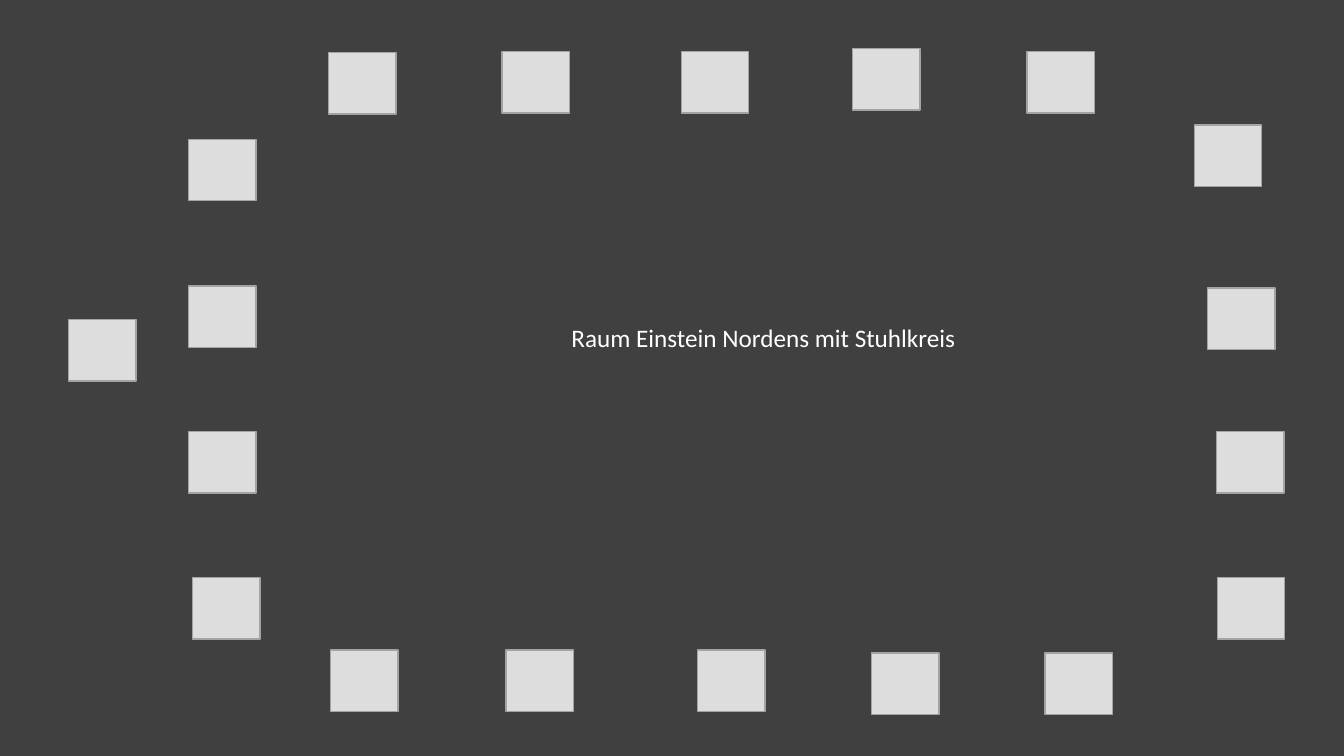
from pptx import Presentation
from pptx.dml.color import RGBColor
from pptx.enum.shapes import MSO_SHAPE
from pptx.enum.text import MSO_AUTO_SIZE
from pptx.util import Cm, Pt

RECTANGLE = MSO_SHAPE.RECTANGLE
FIT_SHAPE = MSO_AUTO_SIZE.SHAPE_TO_FIT_TEXT

COLORS = {"room": "404040", "seat": "DDDDDD", "edge": "A3A3A3", "label": "FFFFFF"}
SEAT_WIDTH, SEAT_HEIGHT = 1.7, 1.55

# Left and top of each chair in cm, by side of the room
CHAIRS = {
    "top": [(8.28, 1.32), (12.65, 1.3), (17.17, 1.3), (21.49, 1.22), (25.88, 1.3)],
    "right": [(30.1, 3.15), (30.43, 7.26), (30.66, 10.87), (30.68, 14.55)],
    "bottom": [(8.33, 16.38), (12.75, 16.38), (17.58, 16.38), (21.97, 16.46), (26.34, 16.46)],
    "left": [(4.75, 3.51), (4.75, 7.21), (4.75, 10.87), (4.85, 14.55)],
    "outside": [(1.73, 8.05)],
}


class RoomPlan:
    def __init__(self, slide, font="Calibri"):
        self.slide = slide
        self.font = font

    def color(self, name):
        return RGBColor.from_string(COLORS[name])

    def background(self):
        fill = self.slide.background.fill
        fill.solid()
        fill.fore_color.rgb = self.color("room")

    def chair(self, left, top):
        seat = self.slide.shapes.add_shape(
            RECTANGLE, Cm(left), Cm(top), Cm(SEAT_WIDTH), Cm(SEAT_HEIGHT))
        seat.shadow.inherit = False
        seat.fill.solid()
        seat.fill.fore_color.rgb = self.color("seat")
        seat.line.color.rgb = self.color("edge")
        seat.line.width = Pt(1)

    def label(self, text, left, top, width, height, size):
        frame = self.slide.shapes.add_textbox(
            Cm(left), Cm(top), Cm(width), Cm(height)).text_frame
        frame.word_wrap = False
        frame.auto_size = FIT_SHAPE
        caption = frame.paragraphs[0]
        caption.text = text
        caption.font.name = self.font
        caption.font.size = Pt(size)
        caption.font.color.rgb = self.color("label")


def main():
    deck = Presentation()
    deck.slide_width, deck.slide_height = Cm(33.87), Cm(19.05)
    plan = RoomPlan(deck.slides.add_slide(deck.slide_layouts[6]))
    plan.background()

    # Circle of chairs
    for side in CHAIRS.values():
        for left, top in side:
            plan.chair(left, top)

    # Room name
    plan.label("Raum Einstein Nordens mit Stuhlkreis", 14.15, 8, 10.26, 1.02, 18)

    deck.save("out.pptx")


if __name__ == "__main__":
    main()
